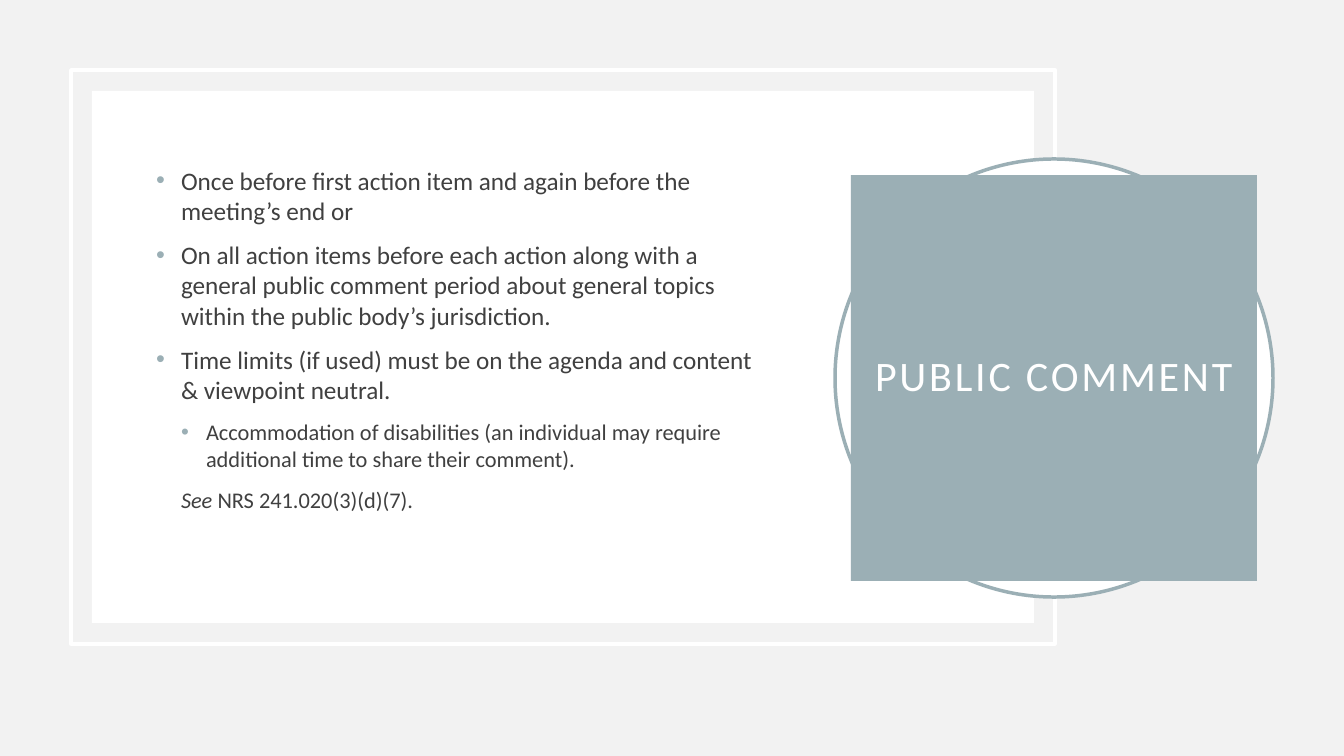
from lxml.etree import SubElement
from pptx import Presentation
from pptx.dml.color import RGBColor
from pptx.enum.shapes import MSO_SHAPE
from pptx.enum.text import MSO_ANCHOR, PP_ALIGN
from pptx.oxml.ns import qn
from pptx.util import Pt

SCALE = 12192000 / 1344  # EMU per px
COLORS = {"backdrop": "F2F2F2", "white": "FFFFFF", "accent": "9BAFB5", "text": "404040"}
FONT = "Calibri"
INDENT = 25

# (runs as (text, italic), size, left margin in steps, bulleted)
RULES = [
    ([("Once before first action item and again before the meeting’s end or", False)], 18, 1, True),
    ([("On all action items before each action along with a general public comment period "
       "about general topics within the public body’s jurisdiction.", False)], 18, 1, True),
    ([("Time limits (if used) must be on the agenda and content & viewpoint neutral.", False)],
     18, 1, True),
    ([("Accommodation of disabilities (an individual may require additional time to share "
       "their comment).", False)], 16, 2, True),
    ([("See ", True), ("NRS 241.020(3)(d)(7).", False)], 16, 1, False),
]


def px(length):
    return round(length * SCALE)


def color(name):
    return RGBColor.from_string(COLORS[name])


def apply(target, values):
    for key, value in values.items():
        setattr(target, key, value)


def inset(box, dx, dy):
    left, top, width, height = box
    return left + dx, top + dy, width - 2 * dx, height - 2 * dy


def add_panel(slide, preset, box, fill=None, line=None):
    panel = slide.shapes.add_shape(preset, *map(px, box))
    panel.shadow.inherit = False
    if fill:
        panel.fill.solid()
        panel.fill.fore_color.rgb = color(fill)
    else:
        panel.fill.background()
    if line:
        panel.line.color.rgb = color(line)
        panel.line.width = Pt(2.5)
    else:
        panel.line.fill.background()
    return panel


def add_run(paragraph, text, size, ink, italic=False):
    run = paragraph.add_run()
    run.text = text
    apply(run.font, {"name": FONT, "size": Pt(size), "italic": italic})
    run.font.color.rgb = color(ink)
    return run


def set_bullet(paragraph, steps, bulleted):
    props = paragraph._p.get_or_add_pPr()
    props.set("marL", str(px(INDENT * steps)))
    props.set("indent", str(px(-INDENT) if bulleted else 0))
    if not bulleted:
        SubElement(props, qn("a:buNone"))
        return
    bullet_color = SubElement(props, qn("a:buClr"))
    SubElement(bullet_color, qn("a:srgbClr"), val=COLORS["accent"])
    SubElement(props, qn("a:buFont"), typeface="Arial")
    SubElement(props, qn("a:buChar"), char="•")


def add_rules(slide, box):
    # White card inside a thin white frame
    add_panel(slide, MSO_SHAPE.RECTANGLE, box, line="white")
    card = inset(box, 21, 21)
    add_panel(slide, MSO_SHAPE.RECTANGLE, card, fill="white")

    # Bulleted rules
    left, top, _, _ = card
    rules = slide.shapes.add_textbox(*map(px, (left + 54, top + 50, 630, 396)))
    frame = rules.text_frame
    apply(frame, {"word_wrap": True, "vertical_anchor": MSO_ANCHOR.MIDDLE,
                  "margin_left": px(10), "margin_right": px(10),
                  "margin_top": px(5), "margin_bottom": px(5)})
    for index, (runs, size, steps, bulleted) in enumerate(RULES):
        rule = frame.add_paragraph() if index else frame.paragraphs[0]
        rule.space_before = Pt(10)
        set_bullet(rule, steps, bulleted)
        for text, italic in runs:
            add_run(rule, text, size, "text", italic)


def add_title(slide, box):
    # Ring behind the title block
    add_panel(slide, MSO_SHAPE.OVAL, box, fill="white", line="accent")

    # Title block
    title = add_panel(slide, MSO_SHAPE.RECTANGLE, inset(box, 16, 16), fill="accent")
    frame = title.text_frame
    apply(frame, {"word_wrap": True, "vertical_anchor": MSO_ANCHOR.MIDDLE})
    apply(frame, {f"margin_{side}": px(20) for side in ("left", "top", "right", "bottom")})
    heading = frame.paragraphs[0]
    apply(heading, {"alignment": PP_ALIGN.CENTER, "line_spacing": 0.9})
    run = add_run(heading, "PUBLIC COMMENT", 30, "white")
    run.font._element.set("spc", "200")


def main():
    deck = Presentation()
    apply(deck, {"slide_width": px(1344), "slide_height": px(756)})
    slide = deck.slides.add_slide(deck.slide_layouts[6])
    slide.background.fill.solid()
    slide.background.fill.fore_color.rgb = color("backdrop")
    add_rules(slide, (71, 70, 984, 574))
    add_title(slide, (835, 159, 438, 438))
    deck.save("out.pptx")


if __name__ == "__main__":
    main()
